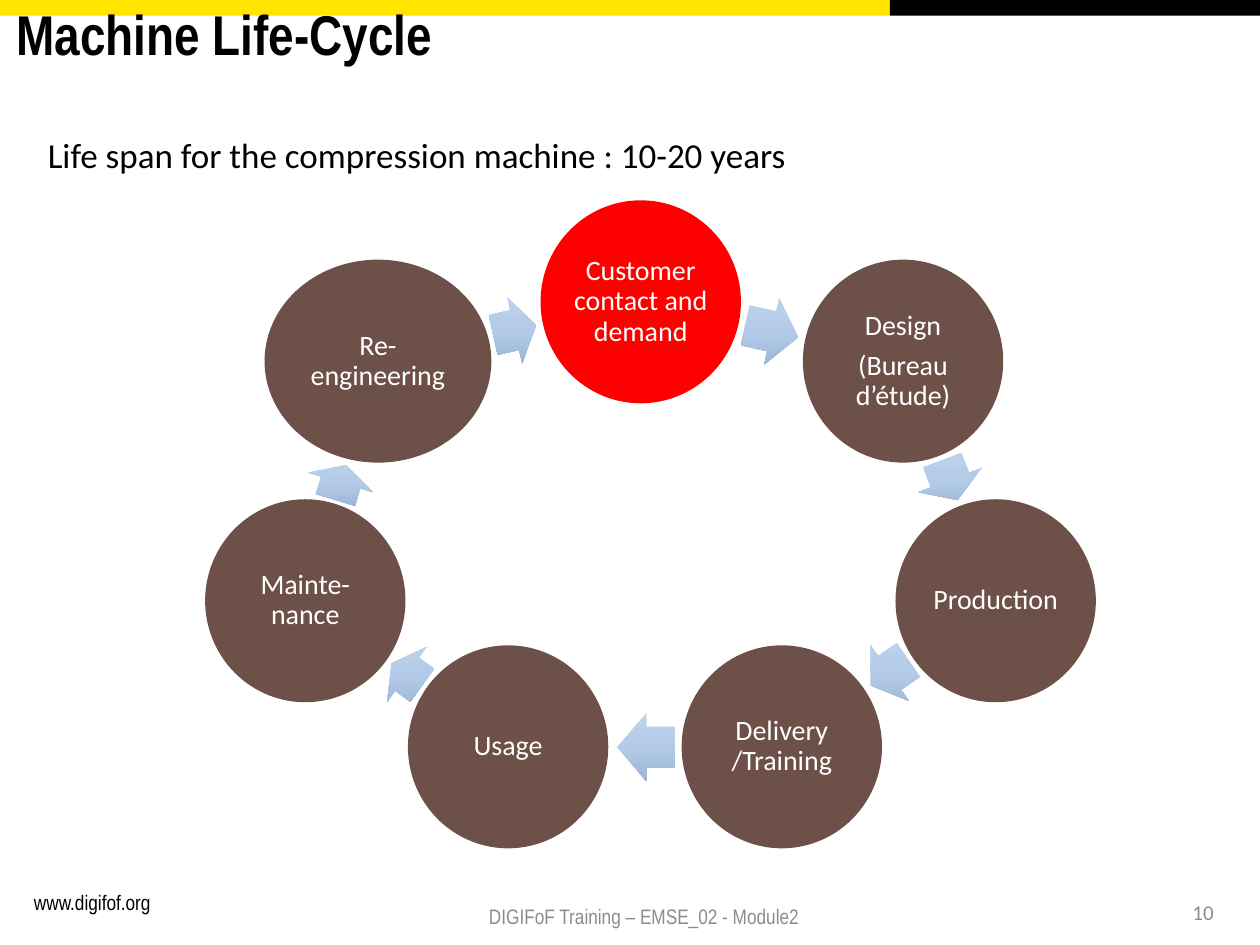
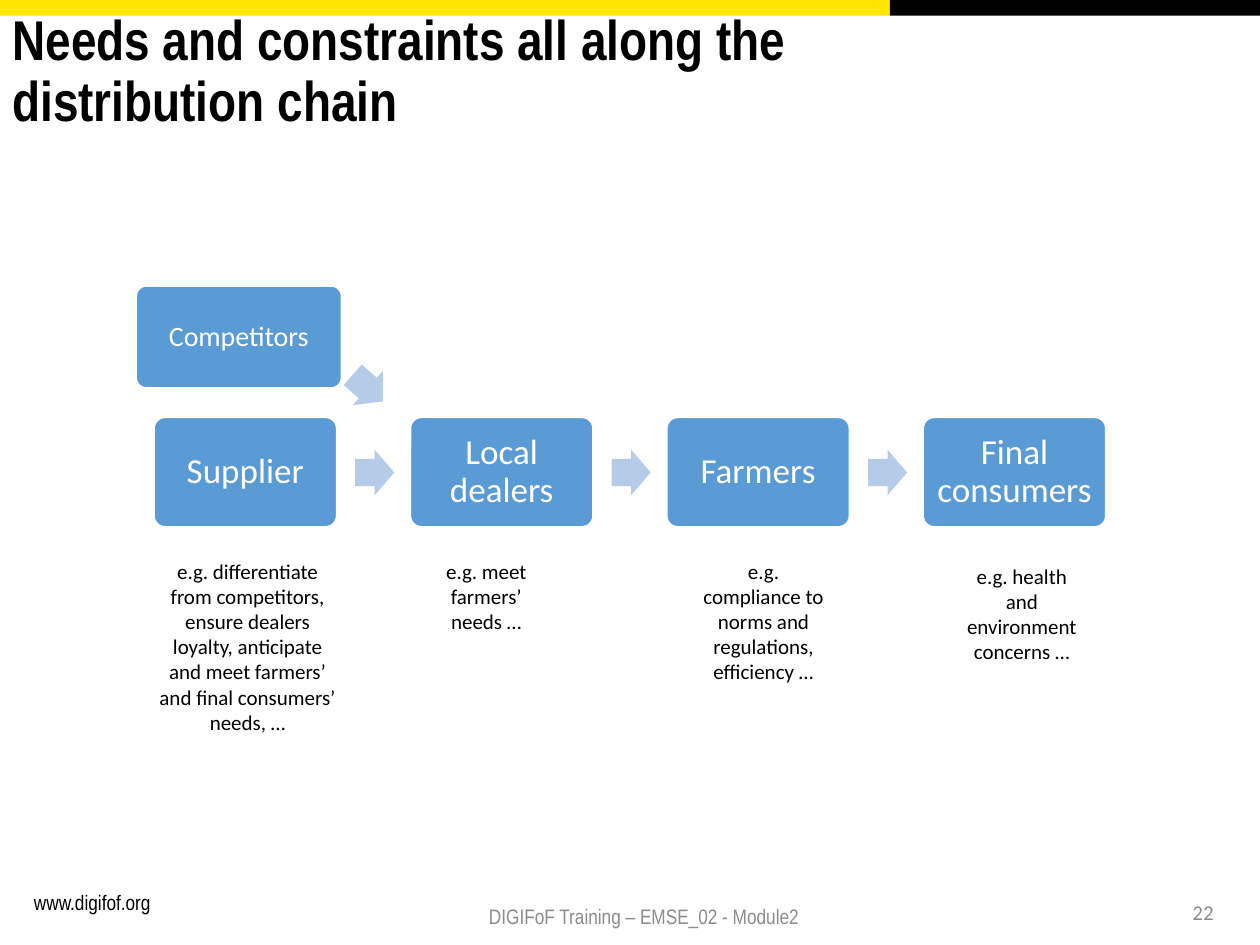
"""Build two slides on a machine's life-cycle and its distribution chain."""
import copy

import pptx
import pptx.dml.color
import pptx.enum.shapes
import pptx.enum.text
import pptx.oxml.ns
import pptx.util

Pt = pptx.util.Pt
SHAPE = pptx.enum.shapes.MSO_SHAPE
ALIGN = pptx.enum.text.PP_ALIGN
ANCHOR = pptx.enum.text.MSO_ANCHOR

COLORS = {
    "yellow": "FFE500",
    "black": "000000",
    "white": "FFFFFF",
    "gray": "8C8C8C",
    "red": "FF0000",
    "brown": "6D5047",
    "blue": "5B9BD5",
    "pale": "B5CBE7",
}
ARROW_GRADIENT = [(0, "C0D2EB"), (0.5, "B3CBE9"), (1, "9BB4D3")]


def rgb(value):
    return pptx.dml.color.RGBColor.from_string(COLORS.get(value, value))


class SlideBuilder:
    def __init__(self):
        self.deck = pptx.Presentation()
        self.deck.slide_width, self.deck.slide_height = Pt(720), Pt(540)
        self.page = None

    def start(self, title, title_area, number):
        self.page = self.deck.slides.add_slide(self.deck.slide_layouts[6])
        self.shape(SHAPE.RECTANGLE, (0, 0, 508.5, 9), "yellow")
        self.shape(SHAPE.RECTANGLE, (508.5, 0, 211.5, 9), "black")
        self.text("www.digifof.org", (14.4, 505.6, 157.7, 22), 12,
                  font="Arial Narrow", insets=(5, 3))
        self.text(title, title_area, 32, font="Arial Narrow", bold=True, leading=0.9)
        self.text(number, (538.6, 506.9, 162, 28.8), 12, "gray",
                  align=ALIGN.RIGHT, anchor=ANCHOR.MIDDLE)
        self.text("DIGIFoF Training – EMSE_02 - Module2", (212.4, 509, 251.3, 28.8), 12,
                  "gray", "Arial Narrow", align=ALIGN.RIGHT, anchor=ANCHOR.MIDDLE)

    def set_text(self, box, words, size, color, font="Calibri", bold=False,
                 align=ALIGN.LEFT, anchor=ANCHOR.TOP, insets=(7.2, 3.6), leading=1, after=0):
        frame = box.text_frame
        frame.word_wrap = True
        frame.vertical_anchor = anchor
        frame.margin_left = frame.margin_right = Pt(insets[0])
        frame.margin_top = frame.margin_bottom = Pt(insets[1])
        frame.text = words
        for paragraph in frame.paragraphs:
            paragraph.alignment = align
            paragraph.line_spacing = leading
            paragraph.space_after = Pt(after)
            paragraph.font.name = font
            paragraph.font.size = Pt(size)
            paragraph.font.bold = bold
            paragraph.font.color.rgb = rgb(color)

    def text(self, words, area, size, color="black", font="Calibri", **style):
        box = self.page.shapes.add_textbox(*map(Pt, area))
        self.set_text(box, words, size, color, font, **style)

    def shape(self, kind, area, fill, line=None):
        shape = self.page.shapes.add_shape(kind, *map(Pt, area))
        shape.shadow.inherit = False
        shape.fill.solid()
        shape.fill.fore_color.rgb = rgb(fill)
        if line:
            shape.line.color.rgb = rgb(line)
            shape.line.width = Pt(1)
        else:
            shape.line.fill.background()
        return shape

    def label(self, shape, words, size, inset):
        self.set_text(shape, words, size, "white", align=ALIGN.CENTER, anchor=ANCHOR.MIDDLE,
                      insets=(inset, inset), leading=0.9, after=0.35 * size)

    def stage(self, words, area, fill):
        self.label(self.shape(SHAPE.OVAL, area, fill), words, 16, 1.5)

    def actor(self, words, area, size, inset):
        card = self.shape(SHAPE.ROUNDED_RECTANGLE, area, "blue", "white")
        card.adjustments[0] = 0.1
        self.label(card, words, size, inset)

    def arrow(self, area, rotation=0):
        arrow = self.shape(SHAPE.RIGHT_ARROW, area, "pale")
        arrow.adjustments[0], arrow.adjustments[1] = 0.6, 0.5
        arrow.rotation = rotation
        return arrow

    def shaded_arrow(self, area, rotation):
        arrow = self.arrow(area, rotation)
        arrow.fill.gradient()
        arrow.fill.gradient_angle = 270
        qn = pptx.oxml.ns.qn
        gradient = arrow.element.spPr.find(qn("a:gradFill"))
        gradient.set("rotWithShape", "0")
        stop_list = gradient.find(qn("a:gsLst"))
        stop_list.insert(1, copy.deepcopy(stop_list[0]))
        for stop, (position, color) in zip(arrow.fill.gradient_stops, ARROW_GRADIENT):
            stop.position = position
            stop.color.rgb = rgb(color)


def life_cycle(builder):
    builder.start("Machine Life-Cycle", (2.2, 0.7, 459.4, 104.4), "10")
    builder.text("Life span for the compression machine : 10-20 years",
                 (20.2, 72.7, 510.5, 31.7), 20)
    stages = [
        ("Customer contact and demand", 308.9, 114.5, 114.5, "red"),
        ("Design\n(Bureau d’étude)", 458.8, 148.4, 114.5, "brown"),
        ("Production", 511.7, 285.3, 114.5, "brown"),
        ("Delivery\v/Training", 389.5, 368.8, 114.5, "brown"),
        ("Usage", 233.1, 368.8, 114.5, "brown"),
        ("Mainte-nance", 117.2, 285.3, 114.5, "brown"),
        ("Re-engineering", 151.2, 148.4, 129.6, "brown"),
    ]
    for words, left, top, width, fill in stages:
        builder.stage(words, (left, top, width, 116), fill)
    arrows = [
        (425.5, 169.9, 31, 12.7),
        (530.6, 254.9, 24.5, 68.9),
        (495.4, 365, 25.9, 145.6),
        (352.8, 407.5, 33.1, 180),
        (221.8, 365.8, 21.6, 215.8),
        (184.3, 256.3, 20.9, 286.8),
        (281.5, 169.2, 25.2, 347.3),
    ]
    for left, top, length, rotation in arrows:
        builder.shaded_arrow((left, top, length, 38.9), rotation)


def distribution_chain(builder):
    builder.start("Needs and constraints all along the distribution chain",
                  (0, 3.6, 568.1, 88.6), "22")
    step = 146.5
    actors = ["Supplier", "Local dealers", "Farmers", "Final consumers"]
    for index, words in enumerate(actors):
        builder.actor(words, (88 + index * step, 238.5, 104.4, 62.6), 20, 5.5)
        if index:
            builder.arrow((203 + (index - 1) * step, 257, 22.3, 26))
    builder.actor("Competitors", (77.8, 163.4, 117.4, 58.3), 16, 5)
    builder.arrow((198.7, 208.8, 23, 26), 41.2)
    needs = [
        ("e.g. differentiate from competitors, ensure dealers loyalty, anticipate "
         "and meet farmers’ and final consumers’ needs, …", 82.1, 315.4, 118.8, 123.8),
        ("e.g. meet farmers’ needs …", 235.4, 315.4, 85, 51.1),
        ("e.g. compliance to norms and regulations, efficiency …", 393.8, 315.4, 85, 79.9),
        ("e.g. health and environment concerns …", 541.4, 318.2, 85, 65.5),
    ]
    for words, *area in needs:
        builder.text(words, area, 12, align=ALIGN.CENTER)


def main():
    builder = SlideBuilder()
    life_cycle(builder)
    distribution_chain(builder)
    builder.deck.save("out.pptx")


if __name__ == "__main__":
    main()
